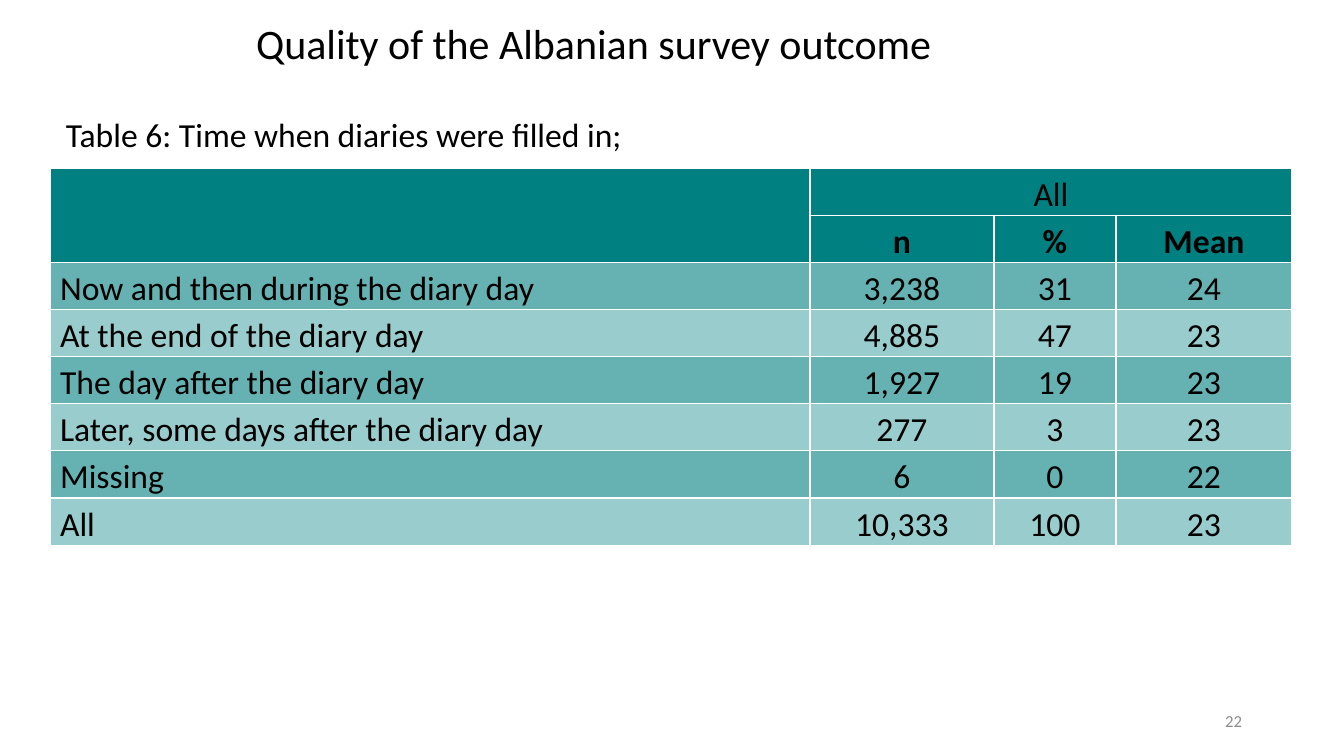
from dataclasses import dataclass

from lxml import etree
from pptx import Presentation
from pptx import util as u
from pptx.dml.color import RGBColor
from pptx.enum import text as t
from pptx.oxml.ns import qn

EMU_PER_PX = 12192000 / 1344


@dataclass(frozen=True)
class Theme:
    font: str = "Calibri"
    ink: str = "000000"
    muted: str = "8C8C8C"
    teal: str = "008080"
    rule: str = "FFFFFF"
    title: int = 30
    body: int = 24
    small: int = 12


THEME = Theme()
HEADINGS = ["n", "%", "Mean"]
FILLING_TIMES = [
    ("Now and then during the diary day", "3,238", "31", "24"),
    ("At the end of the diary day", "4,885", "47", "23"),
    ("The day after the diary day", "1,927", "19", "23"),
    ("Later, some days after the diary day", "277", "3", "23"),
    ("Missing", "6", "0", "22"),
    ("All", "10,333", "100", "23"),
]
COLUMNS = [760, 184, 122, 176]


def px(*lengths):
    return [u.Emu(round(length * EMU_PER_PX)) for length in lengths]


def write(frame, words, size=THEME.body, color=THEME.ink, bold=False,
          align=t.PP_ALIGN.LEFT, spacing=None, after=None):
    paragraph = frame.paragraphs[0]
    paragraph.alignment = align
    if spacing:
        paragraph.line_spacing = spacing
    if after:
        paragraph.space_after = u.Pt(after)
    run = paragraph.add_run()
    run.text = words
    run.font.name, run.font.size, run.font.bold = THEME.font, u.Pt(size), bold
    run.font.color.rgb = RGBColor.from_string(color)


def add_title(slide, box, words):
    title = slide.shapes.title
    title.left, title.top, title.width, title.height = px(*box)
    frame = title.text_frame
    frame.auto_size = t.MSO_AUTO_SIZE.NONE
    frame.vertical_anchor = t.MSO_ANCHOR.MIDDLE
    write(frame, words, size=THEME.title, spacing=0.9)


def add_label(slide, box, words, anchor=t.MSO_ANCHOR.TOP, **style):
    frame = slide.shapes.add_textbox(*px(*box)).text_frame
    frame.word_wrap = True
    frame.vertical_anchor = anchor
    write(frame, words, **style)


def style_cell(cell, opacity):
    """Set margins, white borders and a teal fill of the given percentage."""
    cell.margin_left = cell.margin_right = u.Inches(0.1)
    cell.margin_top = cell.margin_bottom = 0
    cell.fill.solid()
    cell.fill.fore_color.rgb = RGBColor.from_string(THEME.teal)
    properties = cell._tc.get_or_add_tcPr()
    if opacity < 100:
        teal = properties.find(".//" + qn("a:srgbClr"))
        etree.SubElement(teal, qn("a:alpha"), val=str(opacity * 1000))
    for place, side in enumerate(("a:lnL", "a:lnR", "a:lnT", "a:lnB")):
        line = etree.Element(qn(side), w=str(u.Pt(1)))
        fill = etree.SubElement(line, qn("a:solidFill"))
        etree.SubElement(fill, qn("a:srgbClr"), val=THEME.rule)
        properties.insert(place, line)


def add_diary_table(slide, box):
    rows = [("", "All", "", ""), ("", *HEADINGS), *FILLING_TIMES]
    table = slide.shapes.add_table(len(rows), len(COLUMNS), *px(*box)).table
    for column, width in zip(table.columns, px(*COLUMNS)):
        column.width = width
    for r, row in enumerate(rows):
        table.rows[r].height = px(box[3] / len(rows))[0]
        opacity = 100 if r < 2 else (60, 40)[r % 2]
        for c, words in enumerate(row):
            cell = table.cell(r, c)
            style_cell(cell, opacity)
            cell.vertical_anchor = t.MSO_ANCHOR.MIDDLE if c else t.MSO_ANCHOR.BOTTOM
            if words:
                write(cell.text_frame, words, bold=r == 1, spacing=1.15, after=10,
                      align=t.PP_ALIGN.CENTER if c else t.PP_ALIGN.LEFT)
    table.cell(0, 0).merge(table.cell(1, 0))
    table.cell(0, 1).merge(table.cell(0, 3))


def main():
    deck = Presentation()
    deck.slide_width, deck.slide_height = px(1344, 756)
    slide = deck.slides.add_slide(deck.slide_layouts[5])
    add_diary_table(slide, (50, 168, sum(COLUMNS), 368))
    add_label(slide, (950, 701, 302, 40), "22", anchor=t.MSO_ANCHOR.MIDDLE,
              size=THEME.small, color=THEME.muted, align=t.PP_ALIGN.RIGHT)
    add_title(slide, (246, 8, 1098, 76), "Quality of the Albanian survey outcome")
    add_label(slide, (56, 109, 907, 50), "Table 6: Time when diaries were filled in;")
    deck.save("out.pptx")


if __name__ == "__main__":
    main()
